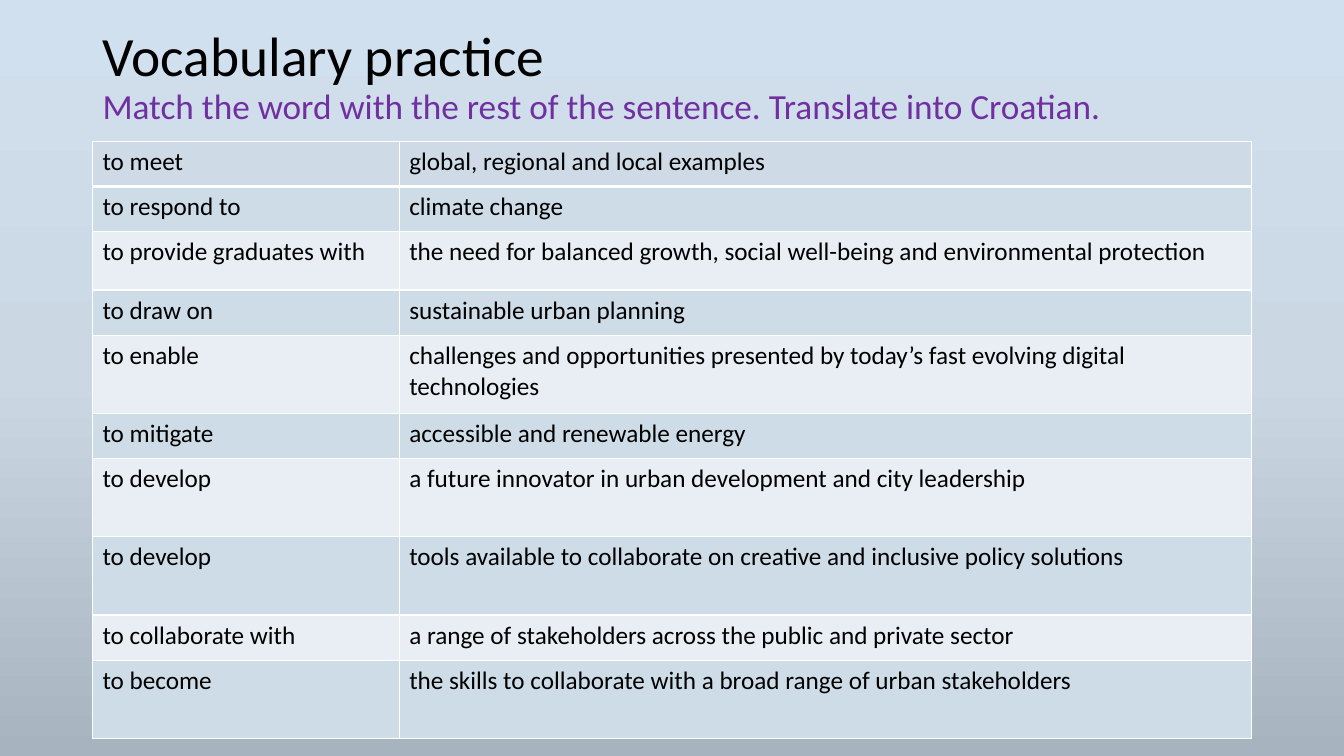
from copy import deepcopy
from typing import NamedTuple

from pptx import Presentation
from pptx.dml.color import RGBColor
from pptx.enum import text
from pptx.oxml import ns, xmlchemy
from pptx.util import Cm, Pt

FONT = "Calibri"
BLACK, PURPLE, WHITE = "000000", "7030A0", "FFFFFF"
HEAD_FILL, DARK_FILL, LIGHT_FILL = "CEDBE6", "CEDCE7", "E8EEF3"
BACKGROUND = [(0, "D1E0EE"), (0.5, "CBD8E4"), (1, "A7B3BE")]
LEFT, WIDTH = Cm(2.33), Cm(29.21)
COLUMNS = [Cm(7.73), Cm(21.48)]
LOW, MEDIUM, HIGH = 1.14, 1.47, 1.97


class Match(NamedTuple):
    verb: str
    rest: str
    height: float = LOW


MATCHES = [
    Match("to meet", "global, regional and local examples"),
    Match("to respond to", "climate change"),
    Match("to provide graduates with",
          "the need for balanced growth, social well-being and environmental protection", MEDIUM),
    Match("to draw on", "sustainable urban planning"),
    Match("to enable",
          "challenges and opportunities presented by today’s fast evolving digital technologies", HIGH),
    Match("to mitigate", "accessible and renewable energy"),
    Match("to develop", "a future innovator in urban development and city leadership", HIGH),
    Match("to develop", "tools available to collaborate on creative and inclusive policy solutions", HIGH),
    Match("to collaborate with", "a range of stakeholders across the public and private sector"),
    Match("to become", "the skills to collaborate with a broad range of urban stakeholders", HIGH),
]


def rgb(value: str) -> RGBColor:
    return RGBColor.from_string(value)


def format_run(r, size: float, color: str) -> None:
    r.font.name = FONT
    r.font.size = Pt(size)
    r.font.color.rgb = rgb(color)


def set_background(s) -> None:
    fill = s.background.fill
    fill.gradient()
    fill.gradient_angle = 270
    stop_list = s.element.find(".//" + ns.qn("a:gsLst"))
    stop_list.insert(1, deepcopy(stop_list[0]))
    for stop, (position, color) in zip(fill.gradient_stops, BACKGROUND):
        stop.position = position
        stop.color.rgb = rgb(color)


def add_title(s) -> None:
    sp = s.shapes.title
    sp.left, sp.top, sp.width, sp.height = LEFT, Cm(1.02), WIDTH, Cm(1.88)
    tf = sp.text_frame
    tf.text = "Vocabulary practice\vMatch the word with the rest of the sentence. Translate into Croatian."
    tf.auto_size = text.MSO_AUTO_SIZE.NONE
    tf.vertical_anchor = text.MSO_ANCHOR.MIDDLE
    p = tf.paragraphs[0]
    p.alignment = text.PP_ALIGN.LEFT
    p.line_spacing = 0.9
    heading, task = p.runs
    format_run(heading, 39.6, BLACK)
    format_run(task, 25.2, PURPLE)
    # The line break takes the size of the heading
    line_break = p._p.find(ns.qn("a:br"))
    line_break.append(deepcopy(heading._r.find(ns.qn("a:rPr"))))


def set_borders(cell, top: float, bottom: float) -> None:
    tc_pr = cell._tc.get_or_add_tcPr()
    sides = [("lnL", 1), ("lnR", 1), ("lnT", top), ("lnB", bottom)]
    for index, (tag, width) in enumerate(sides):
        line = xmlchemy.OxmlElement(f"a:{tag}")
        line.set("w", str(Pt(width)))
        solid = xmlchemy.OxmlElement("a:solidFill")
        color = xmlchemy.OxmlElement("a:srgbClr")
        color.set("val", WHITE)
        solid.append(color)
        line.append(solid)
        tc_pr.insert(index, line)


def fill_cell(cell, words: str, row: int) -> None:
    cell.text = words
    format_run(cell.text_frame.paragraphs[0].runs[0], 18, BLACK)
    cell.fill.solid()
    banded = DARK_FILL if row % 2 else LIGHT_FILL
    cell.fill.fore_color.rgb = rgb(banded if row else HEAD_FILL)
    set_borders(cell, top=3 if row == 1 else 1, bottom=1 if row else 3)


def add_matches(s) -> None:
    height = Cm(sum(match.height for match in MATCHES))
    table = s.shapes.add_table(len(MATCHES), len(COLUMNS), LEFT, Cm(3.56), WIDTH, height).table
    table.first_row = table.horz_banding = False
    for column, width in zip(table.columns, COLUMNS):
        column.width = width
    for row, match in enumerate(MATCHES):
        table.rows[row].height = Cm(match.height)
        for col, words in enumerate((match.verb, match.rest)):
            fill_cell(table.cell(row, col), words, row)


def main() -> None:
    prs = Presentation()
    prs.slide_width, prs.slide_height = Cm(33.87), Cm(19.05)
    s = prs.slides.add_slide(prs.slide_layouts[5])
    set_background(s)
    add_title(s)
    add_matches(s)
    prs.save("out.pptx")


if __name__ == "__main__":
    main()
